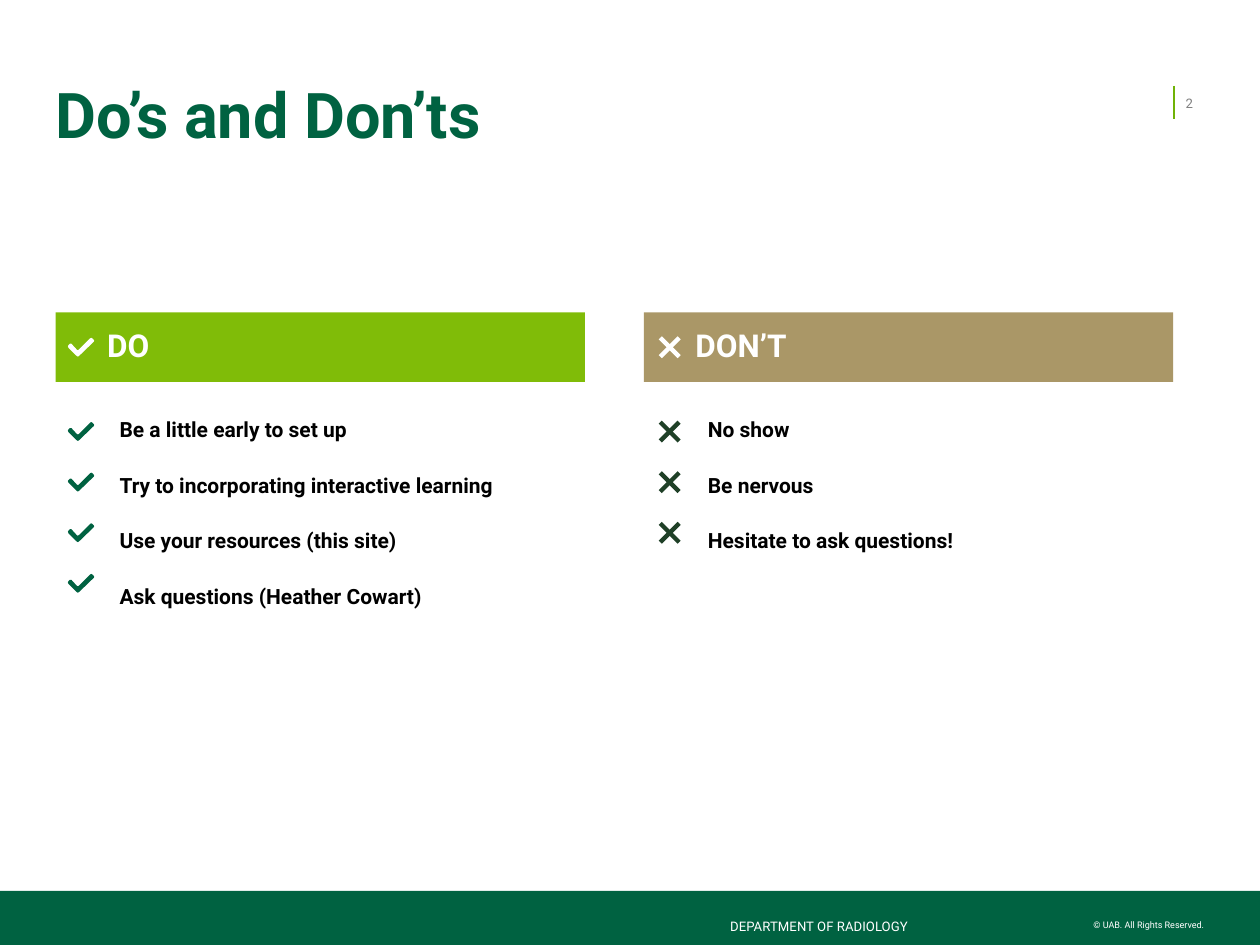
from dataclasses import dataclass
from typing import Callable

from lxml.etree import SubElement
from pptx import Presentation
from pptx.dml.color import RGBColor
from pptx.enum.shapes import MSO_CONNECTOR, MSO_SHAPE
from pptx.enum.text import MSO_ANCHOR, PP_ALIGN
from pptx.oxml.ns import qn
from pptx.slide import Slide
from pptx.text.text import TextFrame
from pptx.util import Cm, Pt

FONT = "Roboto"
GREEN = RGBColor(0x00, 0x62, 0x41)
LIME = RGBColor(0x80, 0xBC, 0x08)
RULE_GREEN = RGBColor(0x70, 0xB2, 0x07)
DARK_GREEN = RGBColor(0x1F, 0x40, 0x27)
TAN = RGBColor(0xAA, 0x97, 0x67)
GRAY = RGBColor(0x80, 0x80, 0x80)
BLACK = RGBColor(0x00, 0x00, 0x00)
WHITE = RGBColor(0xFF, 0xFF, 0xFF)

# Column layout in centimetres
HEADER_TOP, HEADER_WIDTH, HEADER_HEIGHT = 6.3, 10.67, 1.4
HEADER_ICON_TOP = 6.81
FIRST_ICON_TOP, ICON_PITCH = 8.51, 1.02
ICON_SIZE = 0.38

# Check mark outline in hundredths of a centimetre
CHECK_OUTLINE = [
    (20, 38), (17, 36), (1, 20), (0, 17), (1, 15), (4, 12), (7, 12), (18, 24), (20, 25),
    (22, 24), (45, 1), (47, 0), (49, 1), (52, 4), (53, 6), (52, 8), (23, 36),
]


@dataclass(frozen=True)
class TextStyle:
    size: float
    color: RGBColor
    bold: bool = False
    align: PP_ALIGN = PP_ALIGN.LEFT
    anchor: MSO_ANCHOR = MSO_ANCHOR.TOP
    margins: tuple[float, float, float, float] = (0, 0, 0, 0)
    first_spacing: float = 1.0
    wrap: bool = True


@dataclass(frozen=True)
class Column:
    left: float
    heading: str
    items: list[str]
    fill: RGBColor
    icon_color: RGBColor
    icon_offset: float
    draw_icon: Callable[[Slide, float, float, RGBColor], None]


def write_text(frame: TextFrame, lines: list[str], style: TextStyle) -> None:
    frame.word_wrap = style.wrap
    frame.vertical_anchor = style.anchor
    frame.margin_left, frame.margin_top, frame.margin_right, frame.margin_bottom = map(
        Cm, style.margins
    )
    for index, line in enumerate(lines):
        paragraph = frame.add_paragraph() if index else frame.paragraphs[0]
        paragraph.alignment = style.align
        paragraph.line_spacing = 1.5 if index else style.first_spacing
        if index:
            paragraph.space_before = Pt(10)
        run = paragraph.add_run()
        run.text = line
        run.font.name = FONT
        run.font.size = Pt(style.size)
        run.font.bold = style.bold
        run.font.color.rgb = style.color


def add_text(slide: Slide, left: float, top: float, width: float, height: float,
             lines: list[str], style: TextStyle) -> None:
    box = slide.shapes.add_textbox(Cm(left), Cm(top), Cm(width), Cm(height))
    write_text(box.text_frame, lines, style)


def add_bar(slide: Slide, left: float, top: float, width: float, height: float,
            color: RGBColor) -> TextFrame:
    bar = slide.shapes.add_shape(
        MSO_SHAPE.RECTANGLE, Cm(left), Cm(top), Cm(width), Cm(height)
    )
    bar.shadow.inherit = False
    bar.fill.solid()
    bar.fill.fore_color.rgb = color
    bar.line.fill.background()
    return bar.text_frame


def add_line(slide: Slide, start: tuple[float, float], end: tuple[float, float],
             color: RGBColor, weight: float) -> None:
    line = slide.shapes.add_connector(
        MSO_CONNECTOR.STRAIGHT, Cm(start[0]), Cm(start[1]), Cm(end[0]), Cm(end[1])
    )
    line.line.color.rgb = color
    line.line.width = Pt(weight)
    SubElement(line._element.spPr, qn("a:effectLst"))


def draw_check(slide: Slide, left: float, top: float, color: RGBColor) -> None:
    builder = slide.shapes.build_freeform(*CHECK_OUTLINE[0], scale=Cm(0.01))
    builder.add_line_segments(CHECK_OUTLINE[1:], close=True)
    check = builder.convert_to_shape(Cm(left), Cm(top))
    check.shadow.inherit = False
    check.fill.solid()
    check.fill.fore_color.rgb = color
    check.line.fill.background()


def draw_cross(slide: Slide, left: float, top: float, color: RGBColor) -> None:
    right, bottom = left + ICON_SIZE, top + ICON_SIZE
    add_line(slide, (left, top), (right, bottom), color, 2.5)
    add_line(slide, (left, bottom), (right, top), color, 2.5)


def draw_column(slide: Slide, column: Column) -> None:
    # Item list
    add_text(slide, column.left + 1.04, 8.33, 9.65, 5.16, column.items,
             TextStyle(12, BLACK, bold=True, margins=(0.25, 0.13, 0.25, 0.13),
                       first_spacing=0.9))
    # Heading bar
    frame = add_bar(slide, column.left, HEADER_TOP, HEADER_WIDTH, HEADER_HEIGHT, column.fill)
    write_text(frame, [column.heading],
               TextStyle(18, WHITE, bold=True, anchor=MSO_ANCHOR.MIDDLE,
                         margins=(1.04, 0.13, 0.25, 0.13), first_spacing=0.9))
    # Icons
    icon_left = column.left + column.icon_offset
    column.draw_icon(slide, icon_left, HEADER_ICON_TOP, WHITE)
    for row in range(len(column.items)):
        column.draw_icon(slide, icon_left, FIRST_ICON_TOP + row * ICON_PITCH,
                         column.icon_color)


COLUMNS = [
    Column(1.12, "DO",
           ["Be a little early to set up", "Try to incorporating interactive learning",
            "Use your resources (this site)", "Ask questions (Heather Cowart)"],
           LIME, GREEN, 0.25, draw_check),
    Column(12.98, "DON’T",
           ["No show", "Be nervous", "Hesitate to ask questions!"],
           TAN, DARK_GREEN, 0.33, draw_cross),
]


def main() -> None:
    presentation = Presentation()
    presentation.slide_width, presentation.slide_height = Cm(25.4), Cm(19.05)
    slide = presentation.slides.add_slide(presentation.slide_layouts[6])

    # Title and page number
    add_text(slide, 1.12, 1.32, 22.15, 2.13, ["Do’s and Don’ts"],
             TextStyle(36, GREEN, bold=True, anchor=MSO_ANCHOR.MIDDLE, first_spacing=0.9))
    add_line(slide, (23.67, 1.73), (23.67, 2.39), RULE_GREEN, 1)
    add_text(slide, 23.9, 1.57, 0.64, 1.02, ["2"],
             TextStyle(7.5, GRAY, anchor=MSO_ANCHOR.MIDDLE, margins=(0, 0.13, 0, 0.13)))

    # Footer
    add_bar(slide, 0, 17.96, 25.4, 1.09, GREEN)
    add_text(slide, 21.97, 18.54, 2.31, 0.23, ["© UAB. All Rights Reserved."],
             TextStyle(5.2, WHITE, align=PP_ALIGN.RIGHT, wrap=False))
    add_text(slide, 9.88, 18.31, 13.26, 0.53, ["DEPARTMENT OF RADIOLOGY"],
             TextStyle(7.5, WHITE, align=PP_ALIGN.CENTER, anchor=MSO_ANCHOR.BOTTOM))

    # Do and don't columns
    for column in COLUMNS:
        draw_column(slide, column)

    presentation.save("out.pptx")


if __name__ == "__main__":
    main()
